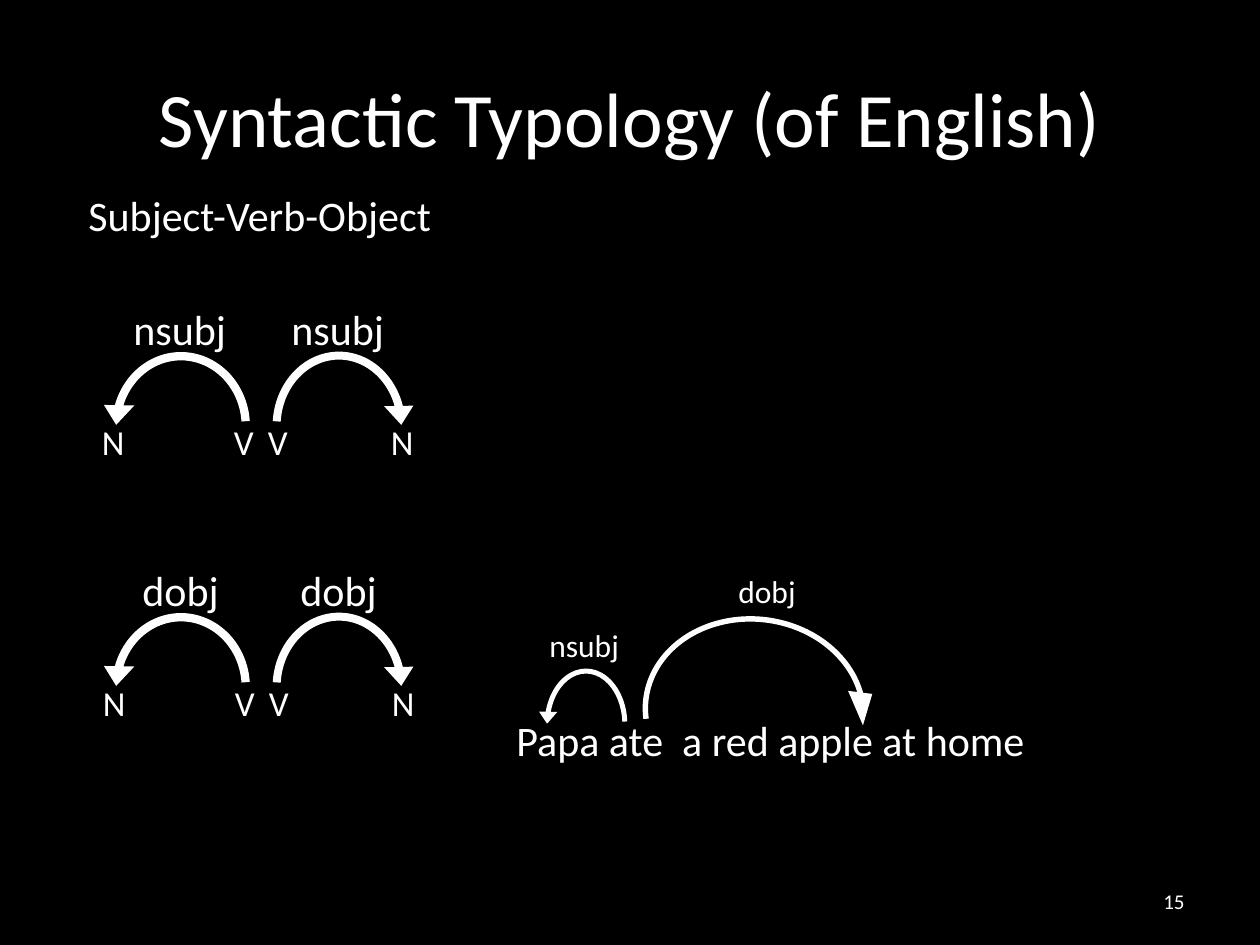
from pptx import Presentation
from pptx.dml.color import RGBColor
from pptx.enum.shapes import MSO_SHAPE as Geo
from pptx.enum.text import MSO_ANCHOR as Anchor, MSO_AUTO_SIZE as Fit, PP_ALIGN as Align
from pptx.util import Emu, Pt

BLACK = RGBColor(0x00, 0x00, 0x00)
WHITE = RGBColor(0xFF, 0xFF, 0xFF)
FONT = "Calibri"
SCALE = 914400 / 126

# Content
TITLE = "Syntactic Typology (of English)"
ORDER = "Subject-Verb-Object"
NUMBER = "15"
SENTENCE = "Papa ate  a red apple at home"
# Relation, label width
RELATIONS = [("nsubj", 120), ("dobj", 102)]
# Word class, centre, width
NODES = [("N", 114, 49), ("N", 403, 49), ("V", 278, 45), ("V", 244, 45)]
# Label centre, arc left, arc width, flipped
ARCS = [(339, 262, 154, False), (181, 101, 160, True)]

# Layout
TOP, PITCH = 297, 261
ARC_DROP, NODE_DROP, ARC_H = 44, 117, 170
EVEN = (0.052, 10.51, 204.873, 110.528, 0.095)
WIDE = (0.026, 10.51, 205.685, 101.816, 0.058)


def px(*nums):
    return [Emu(round(n * SCALE)) for n in nums]


def write(shape, text, size, align=Align.LEFT):
    para = shape.text_frame.paragraphs[0]
    para.text = text
    para.alignment = align
    style = {"name": FONT, "size": Pt(size)}
    for key, val in style.items():
        setattr(para.font, key, val)
    para.font.color.rgb = WHITE


def label(parts, text, size, box):
    shape = parts.add_textbox(*px(*box))
    frame = shape.text_frame
    for key, val in {"word_wrap": False, "auto_size": Fit.SHAPE_TO_FIT_TEXT}.items():
        setattr(frame, key, val)
    write(shape, text, size)


def arc(parts, box, shares=EVEN, flip=False, turn=0):
    shape = parts.add_shape(Geo.CIRCULAR_ARROW, *px(*box))
    for i, share in enumerate(shares):
        shape.adjustments[i] = share
    shape.fill.solid()
    shape.fill.fore_color.rgb = WHITE
    shape.line.fill.background()
    shape.shadow.inherit = False
    shape.rotation = turn
    if flip:
        shape._element.spPr.xfrm.set("flipH", "1")


deck = Presentation()
deck.slide_width, deck.slide_height = px(1260, 945)
slide = deck.slides.add_slide(deck.slide_layouts[5])
slide.background.fill.solid()
slide.background.fill.fore_color.rgb = BLACK

# Title and word order
title = slide.shapes.title
title.left, title.top, title.width, title.height = px(63, 38, 1134, 158)
title.text_frame.vertical_anchor = Anchor.MIDDLE
write(title, TITLE, 44, Align.CENTER)
label(slide.shapes, ORDER, 24, (76, 183, 372, 63))

# Slide number
number = slide.shapes.add_textbox(*px(903, 876, 294, 50))
number.text_frame.word_wrap = True
number.text_frame.vertical_anchor = Anchor.MIDDLE
write(number, NUMBER, 12, Align.RIGHT)

# Example sentence with its two arcs
parts = slide.shapes.add_group_shape().shapes
label(parts, SENTENCE, 24, (504, 708, 538, 63))
arc(parts, (538, 662, 96, 125), flip=True)
label(parts, "nsubj", 18, (537, 620, 96, 50))
arc(parts, (633, 607, 243, 210), WIDE, turn=6.7)
label(parts, "dobj", 18, (726, 566, 83, 50))

# Both directions of each relation
parts = slide.shapes.add_group_shape().shapes
for row, (name, wide) in enumerate(RELATIONS):
    top = TOP + row * PITCH
    for mid, left, width, flip in ARCS:
        arc(parts, (left, top + ARC_DROP, width, ARC_H), flip=flip)
        label(parts, name, 24, (mid - wide / 2, top, wide, 63))
    for kind, mid, width in NODES:
        label(parts, kind, 20, (mid + row - width / 2, top + NODE_DROP, width, 55))

deck.save("out.pptx")
